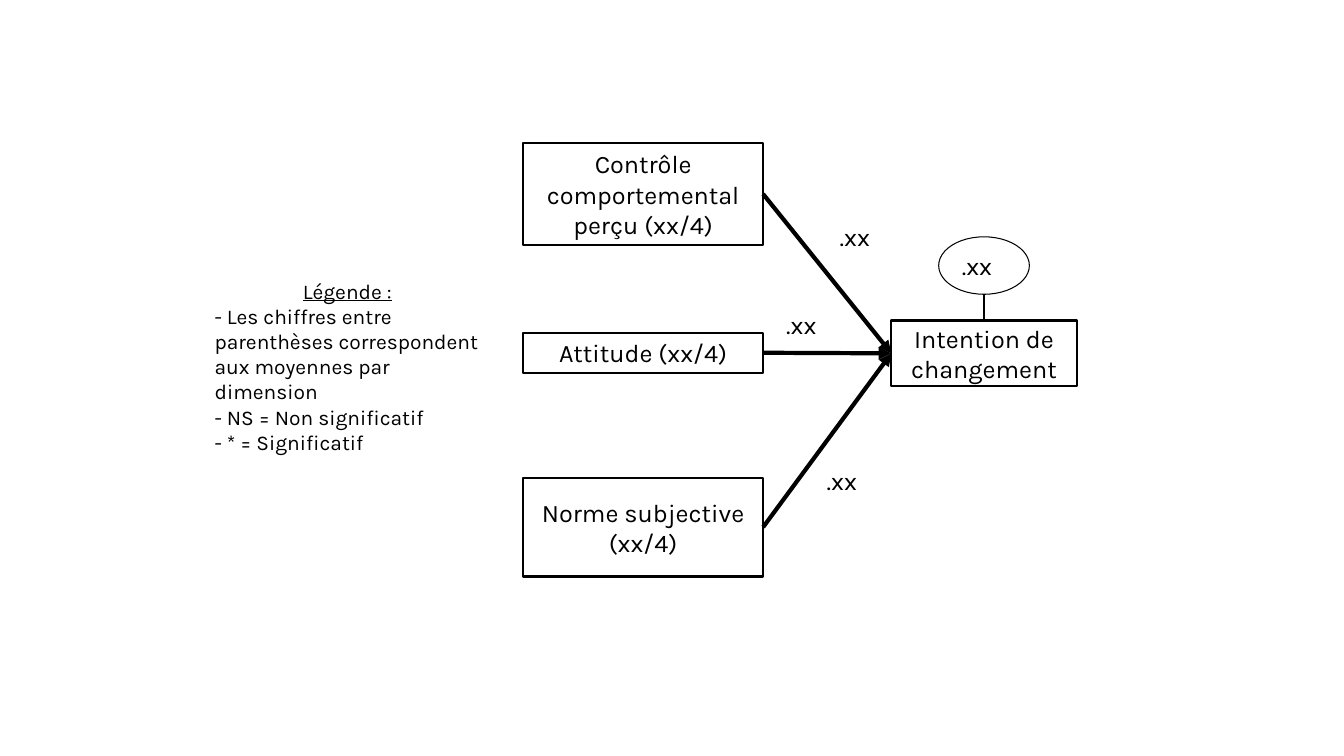
from dataclasses import dataclass

from pptx import Presentation
from pptx.dml.color import RGBColor
from pptx.enum.shapes import MSO_CONNECTOR, MSO_SHAPE
from pptx.enum.text import MSO_ANCHOR, MSO_AUTO_SIZE, PP_ALIGN
from pptx.oxml.ns import qn
from pptx.util import Inches, Pt
from lxml.etree import SubElement


@dataclass(frozen=True)
class Theme:
    """Colours, type sizes and line widths of the slide."""
    ink: RGBColor = RGBColor(0, 0, 0)
    font: str = "Karla"
    body: float = 18
    small: float = 15
    hair: float = 0.75
    stem: float = 1
    edge: float = 1.5
    arrow: float = 3


THEME = Theme()
WIDE, HIGH = Inches(13.33), Inches(7.5)
LEFT, SPAN = 38.93, 17.85
GOAL = (66.32, 42.4, 13.8, 8.67)
RATIO = (69.84, 31.33, 6.75, 7.6)
CAUSES = [
    ("Contrôle comportemental perçu (xx/4)", 18.93, 13.47, True),
    ("Attitude (xx/4)", 44, 5.33, True),
    ("Norme subjective (xx/4)", 63.2, 13.07, False),
]
WEIGHTS = [(61.74, 28.67, 6.75), (57.76, 40.27, 7.35), (60.77, 60.93, 5.85)]
LEGEND = [
    "Légende :",
    "- Les chiffres entre parenthèses correspondent aux moyennes par dimension",
    "- NS = Non significatif",
    "- * = Significatif",
]


def scale(*shares):
    """Turn alternating percentages of slide width and height into lengths."""
    return [round((HIGH if i % 2 else WIDE) * s / 100)
            for i, s in enumerate(shares)]


def write(shape, lines, size=THEME.body, align=PP_ALIGN.LEFT,
          anchor=MSO_ANCHOR.TOP, grow=True):
    """Fill a shape with one paragraph per line and return the paragraphs."""
    frame = shape.text_frame
    frame.word_wrap = True
    frame.vertical_anchor = anchor
    frame.auto_size = MSO_AUTO_SIZE.SHAPE_TO_FIT_TEXT if grow else MSO_AUTO_SIZE.NONE
    for i, line in enumerate(lines):
        para = frame.add_paragraph() if i else frame.paragraphs[0]
        para.alignment = align
        run = para.add_run()
        run.text = line
        run.font.name = THEME.font
        run.font.size = Pt(size)
        run.font.color.rgb = THEME.ink
    return frame.paragraphs


def draw(slide, kind, area, width):
    """Add an unfilled outlined shape."""
    shape = slide.shapes.add_shape(kind, *scale(*area))
    shape.shadow.inherit = False
    shape.fill.background()
    shape.line.color.rgb = THEME.ink
    shape.line.width = Pt(width)
    return shape


def box(slide, text, area, grow):
    """Add a framed concept with centred text."""
    shape = draw(slide, MSO_SHAPE.RECTANGLE, area, THEME.edge)
    write(shape, [text], align=PP_ALIGN.CENTER, anchor=MSO_ANCHOR.MIDDLE, grow=grow)


def note(slide, lines, area, size=THEME.body):
    """Add a plain text box and return its paragraphs."""
    return write(slide.shapes.add_textbox(*scale(*area)), lines, size)


def link(slide, start, end, width, head=False):
    """Add a straight line, with an arrowhead at its end if asked."""
    line = slide.shapes.add_connector(MSO_CONNECTOR.STRAIGHT, *scale(*start, *end))
    line.line.color.rgb = THEME.ink
    line.line.width = Pt(width)
    if head:
        SubElement(line.line._get_or_add_ln(), qn("a:tailEnd"), type="triangle")
    SubElement(line._element.spPr, qn("a:effectLst"))


def main():
    """Build the path diagram and save it."""
    deck = Presentation()
    deck.slide_width, deck.slide_height = WIDE, HIGH
    slide = deck.slides.add_slide(deck.slide_layouts[6])

    x, y, w, h = GOAL
    box(slide, "Intention de changement", GOAL, False)
    for text, top, tall, grow in CAUSES:
        box(slide, text, (LEFT, top, SPAN, tall), grow)
        link(slide, (LEFT + SPAN, top + tall / 2), (x, y + h / 2), THEME.arrow, True)

    write(draw(slide, MSO_SHAPE.OVAL, RATIO, THEME.hair), [".xx"])
    mid = x + w / 2
    link(slide, (mid, y), (mid, RATIO[1] + RATIO[3]), THEME.stem)

    for area in WEIGHTS:
        note(slide, [".xx"], (*area, 5.33))
    head = note(slide, LEGEND, (15.23, 36.13, 21.23, 21.6), THEME.small)[0]
    head.alignment = PP_ALIGN.CENTER
    head.runs[0].font.underline = True
    deck.save("out.pptx")


if __name__ == "__main__":
    main()
